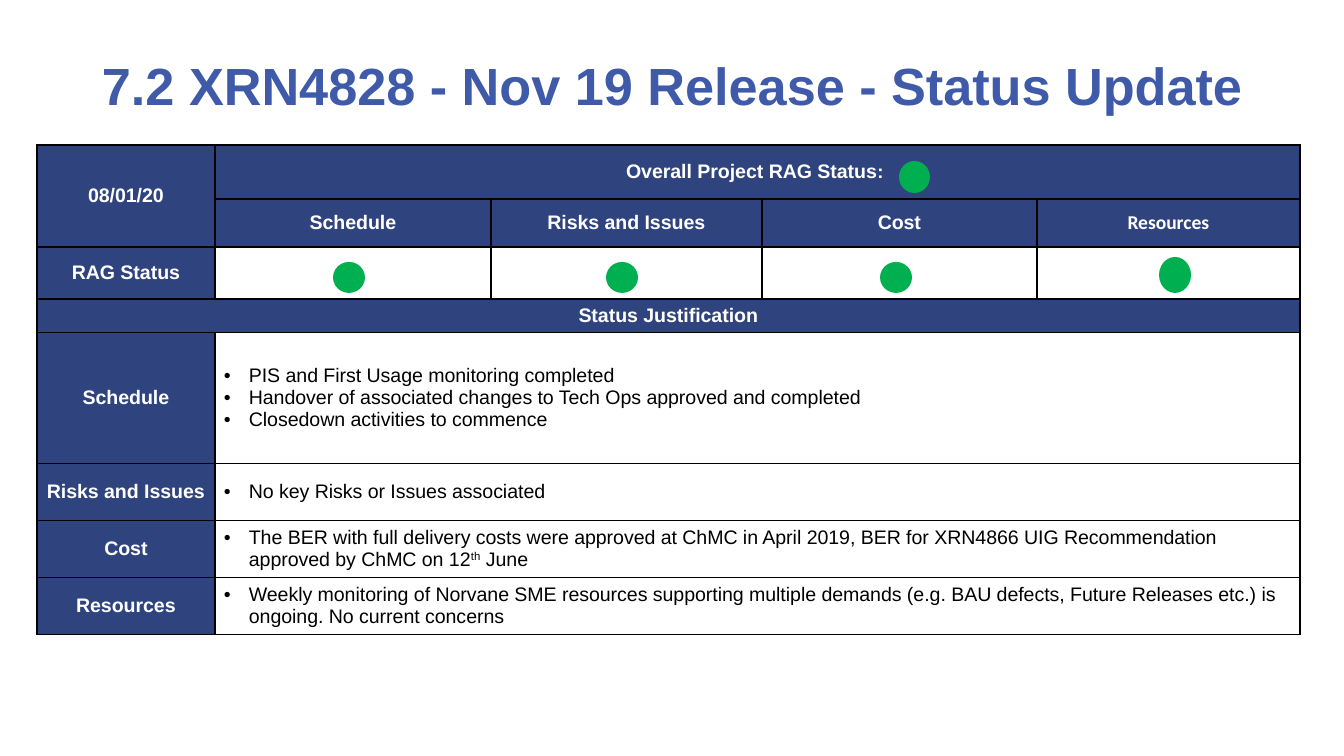
from lxml.etree import SubElement
from pptx import Presentation
from pptx.dml.color import RGBColor
from pptx.enum.shapes import MSO_SHAPE
from pptx.enum.text import MSO_ANCHOR, PP_ALIGN
from pptx.oxml.ns import qn
from pptx.util import Pt

SCALE = 914400 / 134.4
NAVY, WHITE, BLACK, BLUE, GREEN = "2F447E", "FFFFFF", "000000", "3E5AA8", "00B050"
BASE = {"name": "Arial", "size": Pt(10.5)}
TITLE = {"name": "Arial", "size": Pt(28), "bold": True}
HEADING = {**BASE, "bold": True}
BODY = {**BASE, "bold": False}
COLUMNS = [178, 276, 271, 275, 263]
ROWS = [54, 48, 52, 31, 131, 57, 54, 54]
MERGES = [(0, 0, 1, 0), (0, 1, 0, 4), (3, 0, 3, 4)] + [(row, 1, row, 4) for row in range(4, 8)]
HEADINGS = {
    (0, 0): [("08/01/20", {})],
    (0, 1): [("Overall Project RAG Status", {}), (": ", {"size": Pt(10)})],
    (1, 1): [("Schedule", {})],
    (1, 2): [("Risks and Issues", {})],
    (1, 3): [("Cost", {})],
    (1, 4): [("Resources", {"name": "Calibri"})],
    (2, 0): [("RAG Status", {})],
    (3, 0): [("Status Justification", {})],
    (4, 0): [("Schedule", {})],
    (5, 0): [("Risks and Issues", {})],
    (6, 0): [("Cost", {})],
    (7, 0): [("Resources", {})],
}
JUSTIFICATIONS = {
    4: [["PIS and First Usage monitoring completed"],
        ["Handover of associated changes to Tech Ops approved and completed"],
        ["Closedown activities to commence"]],
    5: [["No key Risks or Issues associated"]],
    6: [["The BER with full delivery costs were approved at ChMC in April 2019, BER for "
         "XRN4866 UIG Recommendation approved by ChMC on 12", "th", " June"]],
    7: [["Weekly monitoring of Norvane SME resources supporting multiple demands (e.g. BAU "
         "defects, Future Releases etc.) is ongoing. No current concerns"]],
}
DOTS = [(862, 16, 31, 32), (296, 117, 32, 31), (569, 117, 32, 31),
        (843, 117, 32, 31), (1122, 112, 32, 36)]


def px(length):
    """Turn px into EMU."""
    return round(length * SCALE)


def paint(target, colour):
    """Give a fill or a font colour a hex value."""
    target.rgb = RGBColor.from_string(colour)


def fill_solid(thing, colour):
    """Fill a shape or cell with one colour."""
    thing.fill.solid()
    paint(thing.fill.fore_color, colour)


def add_span(para, text, formats, colour):
    """Add a run with the given font values."""
    span = para.add_run()
    span.text = text
    for key, value in formats.items():
        setattr(span.font, key, value)
    paint(span.font.color, colour)
    return span


def add_bullet(para):
    """Give a paragraph a hanging bullet."""
    properties = para._p.get_or_add_pPr()
    properties.set("marL", str(px(25)))
    properties.set("indent", str(-px(25)))
    SubElement(properties, qn("a:buFont"), typeface="Arial")
    SubElement(properties, qn("a:buChar"), char="•")


def style_cell(cell, colour):
    """Set borders, margins, anchor and fill of a cell."""
    properties = cell._tc.get_or_add_tcPr()
    for side in ("lnL", "lnR", "lnT", "lnB"):
        line = SubElement(properties, qn(f"a:{side}"), w=str(Pt(1)))
        SubElement(SubElement(line, qn("a:solidFill")), qn("a:srgbClr"), val=BLACK)
    margins = {"margin_left": px(9), "margin_right": px(9), "margin_top": px(5),
               "margin_bottom": px(5), "vertical_anchor": MSO_ANCHOR.MIDDLE}
    for key, value in margins.items():
        setattr(cell, key, value)
    fill_solid(cell, colour)


def add_title(page, left, top, width, height):
    """Place the centred slide title."""
    box = page.shapes.add_textbox(px(left), px(top), px(width), px(height))
    frame = box.text_frame
    frame.word_wrap = True
    frame.vertical_anchor = MSO_ANCHOR.MIDDLE
    para = frame.paragraphs[0]
    para.alignment = PP_ALIGN.CENTER
    add_span(para, "7.2 XRN4828 - Nov 19 Release - Status Update", TITLE, BLUE)


def add_status_table(page, left, top):
    """Place the status table with its headings and justifications."""
    frame = page.shapes.add_table(len(ROWS), len(COLUMNS), px(left), px(top),
                                  px(sum(COLUMNS)), px(sum(ROWS)))
    table = frame.table
    table.first_row = table.horz_banding = False
    for column, width in zip(table.columns, COLUMNS):
        column.width = px(width)
    for row, height in zip(table.rows, ROWS):
        row.height = px(height)
    for row in range(len(ROWS)):
        for column in range(len(COLUMNS)):
            is_heading = column == 0 or row in (0, 1, 3)
            style_cell(table.cell(row, column), NAVY if is_heading else WHITE)
    for first_row, first_column, last_row, last_column in MERGES:
        table.cell(first_row, first_column).merge(table.cell(last_row, last_column))
    for place, spans in HEADINGS.items():
        para = table.cell(*place).text_frame.paragraphs[0]
        para.alignment = PP_ALIGN.CENTER
        for text, changes in spans:
            add_span(para, text, {**HEADING, **changes}, WHITE)
    for row, points in JUSTIFICATIONS.items():
        text_frame = table.cell(row, 1).text_frame
        for index, texts in enumerate(points):
            para = text_frame.add_paragraph() if index else text_frame.paragraphs[0]
            add_bullet(para)
            for text in texts:
                span = add_span(para, text, BODY, BLACK)
                if text == "th":
                    span._r.get_or_add_rPr().set("baseline", "30000")


def add_dots(page, left, top):
    """Place the green status dots relative to the table corner."""
    for across, down, width, height in DOTS:
        dot = page.shapes.add_shape(MSO_SHAPE.OVAL, px(left + across), px(top + down),
                                    px(width), px(height))
        dot.shadow.inherit = False
        fill_solid(dot, GREEN)
        dot.line.fill.background()


def main():
    """Build and save the deck."""
    deck = Presentation()
    deck.slide_width, deck.slide_height = px(1344), px(756)
    page = deck.slides.add_slide(deck.slide_layouts[6])
    add_title(page, 67, 38, 1210, 94)
    add_status_table(page, 37, 145)
    add_dots(page, 37, 145)
    deck.save("out.pptx")


if __name__ == "__main__":
    main()
